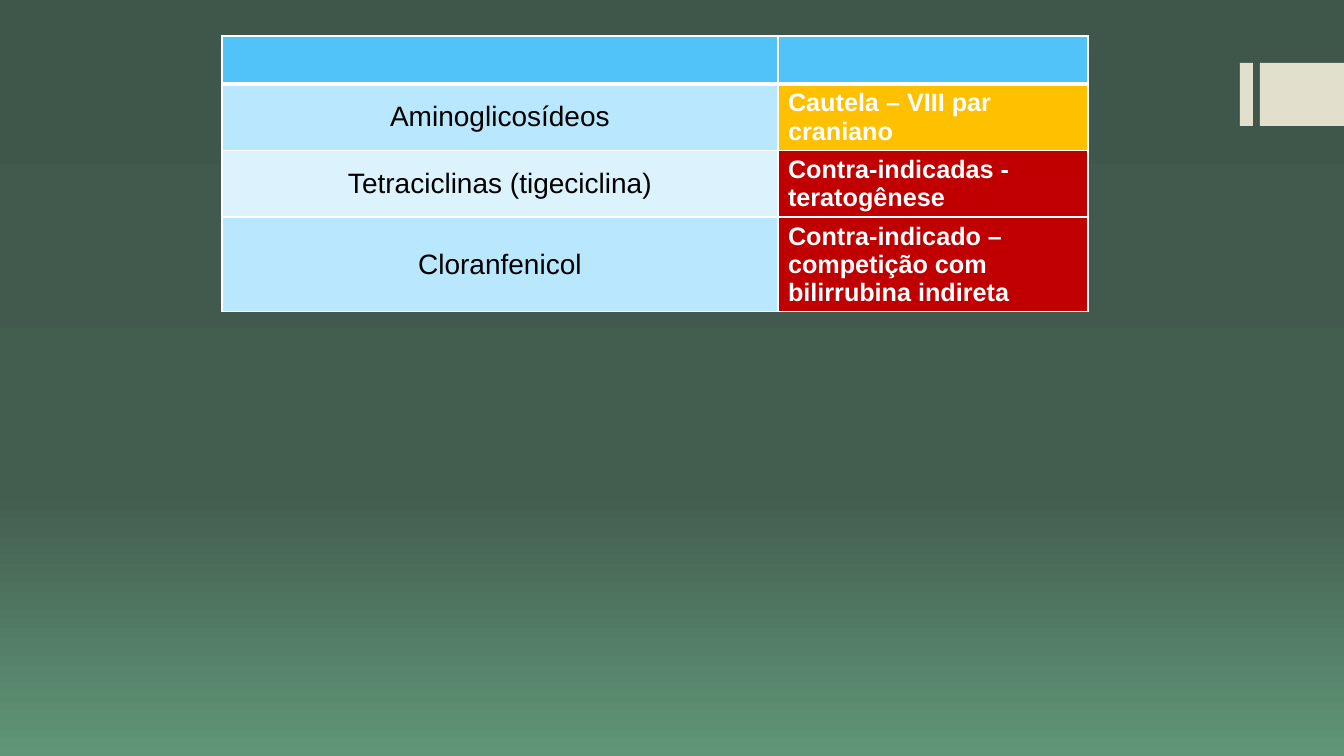
from copy import deepcopy
from dataclasses import dataclass

from lxml.etree import SubElement
from pptx import Presentation
from pptx.dml.color import RGBColor as RGB
from pptx.enum.shapes import MSO_SHAPE as SHAPE
from pptx.enum.text import MSO_ANCHOR as ANCHOR, PP_ALIGN as ALIGN
from pptx.oxml.ns import qn
from pptx.util import Pt

SLIDE = (1344, 756)
TABLE_AT = (222, 36)
COLUMNS = (556, 310)
ROW_HEIGHT = 48
TAB_BARS = [(1240, 63, 13, 63), (1260, 63, 84, 63)]

# drug class, advice, advice level
ROWS = [
    ("", "", "header"),
    ("Aminoglicosídeos", "Cautela – VIII par craniano", "caution"),
    ("Tetraciclinas (tigeciclina)", "Contra-indicadas - teratogênese", "forbidden"),
    ("Cloranfenicol", "Contra-indicado – competição com bilirrubina indireta", "forbidden"),
]


@dataclass(frozen=True)
class Theme:
    font: str = "Arial"
    drug_size: int = 20
    advice_size: int = 18
    drug_text: str = "000000"
    advice_text: str = "FFFFFF"
    border: str = "FFFFFF"
    bar: str = "E2DFCC"
    header: str = "51C3F9"
    caution: str = "FFC000"
    forbidden: str = "C00000"
    bands: tuple = ("DCF3FE", "B9E7FD")
    backdrop: tuple = ((0, "3F564A"), (0.65, "435D4F"), (1, "609677"))


THEME = Theme()


def px(length):
    return round(length * 12192000 / SLIDE[0])


def paint_backdrop(slide):
    fill = slide.background.fill
    fill.gradient()
    fill.gradient_angle = 270
    first_stop = next(slide.element.iter(qn("a:gs")))
    first_stop.addnext(deepcopy(first_stop))
    for stop, (position, color) in zip(fill.gradient_stops, THEME.backdrop):
        stop.position = position
        stop.color.rgb = RGB.from_string(color)


def add_bar(slide, box):
    bar = slide.shapes.add_shape(SHAPE.RECTANGLE, *map(px, box))
    bar.shadow.inherit = False
    bar.fill.solid()
    bar.fill.fore_color.rgb = RGB.from_string(THEME.bar)
    bar.line.fill.background()


def set_borders(cell, bottom):
    properties = cell._tc.get_or_add_tcPr()
    for index, (side, width) in enumerate(zip("LRTB", (1, 1, 1, bottom))):
        line = SubElement(properties, qn(f"a:ln{side}"), w=str(Pt(width)))
        solid = SubElement(line, qn("a:solidFill"))
        SubElement(solid, qn("a:srgbClr"), val=THEME.border)
        properties.insert(index, line)


def fill_cell(cell, text, fill, size, color, bold, align):
    cell.text = text
    cell.vertical_anchor = ANCHOR.MIDDLE
    cell.fill.solid()
    cell.fill.fore_color.rgb = RGB.from_string(fill)
    paragraph = cell.text_frame.paragraphs[0]
    paragraph.alignment = align
    font = paragraph.font
    font.name, font.size, font.bold = THEME.font, Pt(size), bold
    font.color.rgb = RGB.from_string(color)


def add_drug_table(slide):
    table = slide.shapes.add_table(
        len(ROWS), len(COLUMNS), *map(px, TABLE_AT),
        px(sum(COLUMNS)), px(ROW_HEIGHT * len(ROWS))).table
    table.first_row = table.horz_banding = False
    for column, width in zip(table.columns, COLUMNS):
        column.width = px(width)
    for number, (drug, advice, level) in enumerate(ROWS):
        table.rows[number].height = px(ROW_HEIGHT)
        is_header = level == "header"
        drug_fill = THEME.header if is_header else THEME.bands[number % 2]
        drug_cell, advice_cell = table.rows[number].cells
        fill_cell(drug_cell, drug, drug_fill, THEME.drug_size,
                  THEME.drug_text, False, ALIGN.CENTER)
        fill_cell(advice_cell, advice, getattr(THEME, level), THEME.advice_size,
                  THEME.advice_text, True, ALIGN.LEFT)
        for cell in (drug_cell, advice_cell):
            set_borders(cell, bottom=3 if is_header else 1)


def main():
    deck = Presentation()
    deck.slide_width, deck.slide_height = map(px, SLIDE)
    slide = deck.slides.add_slide(deck.slide_layouts[6])
    paint_backdrop(slide)
    for box in TAB_BARS:
        add_bar(slide, box)
    add_drug_table(slide)
    deck.save("out.pptx")


if __name__ == "__main__":
    main()
